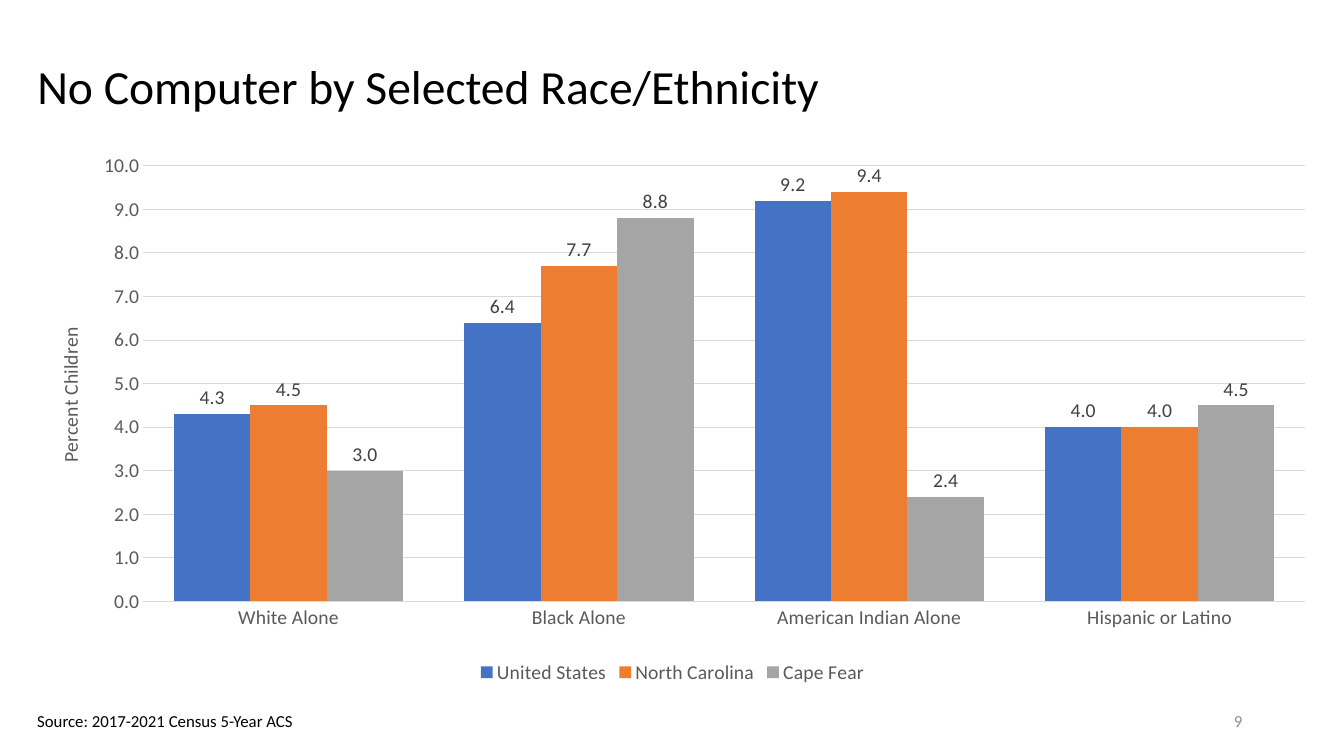
from dataclasses import dataclass
from typing import Optional

import lxml.etree
import pptx
import pptx.chart.data
import pptx.dml.color
import pptx.enum.chart
import pptx.enum.text
import pptx.oxml
import pptx.oxml.ns
import pptx.util

Inches = pptx.util.Inches
Pt = pptx.util.Pt
qn = pptx.oxml.ns.qn
PP_ALIGN = pptx.enum.text.PP_ALIGN
MSO_ANCHOR = pptx.enum.text.MSO_ANCHOR


@dataclass(frozen=True)
class Theme:
    font: str = "Calibri"
    ink: str = "000000"
    axis: str = "595959"
    label: str = "404040"
    muted: str = "8C8C8C"
    grid: str = "D9D9D9"
    title_size: float = 34
    chart_size: float = 14
    small_size: float = 12
    number_format: str = "#,##0.0"


@dataclass(frozen=True)
class Region:
    name: str
    values: tuple
    color: str


@dataclass(frozen=True)
class Caption:
    text: str
    left: float
    top: float
    width: float
    height: float
    color: str
    align: PP_ALIGN
    anchor: MSO_ANCHOR
    wrap: bool


THEME = Theme()
GROUPS = ("White Alone", "Black Alone", "American Indian Alone", "Hispanic or Latino")
REGIONS = (
    Region("United States", (4.3, 6.4, 9.2, 4.0), "4472C4"),
    Region("North Carolina", (4.5, 7.7, 9.4, 4.0), "ED7D31"),
    Region("Cape Fear", (3.0, 8.8, 2.4, 4.5), "A5A5A5"),
)
CAPTIONS = (
    Caption("9", 9.42, 6.95, 3, 0.4, THEME.muted, PP_ALIGN.RIGHT, MSO_ANCHOR.MIDDLE, True),
    Caption("Source: 2017-2021 Census 5-Year ACS", 0.27, 7, 2.78, 0.3, THEME.ink,
            PP_ALIGN.LEFT, MSO_ANCHOR.TOP, False),
)


def rgb(color: str) -> pptx.dml.color.RGBColor:
    return pptx.dml.color.RGBColor.from_string(color)


def style_font(font, size: float, color: str) -> None:
    font.name = THEME.font
    font.size = Pt(size)
    font.bold = False
    font.color.rgb = rgb(color)


def place(s, left: float, top: float, width: float, height: float) -> None:
    s.left, s.top = Inches(left), Inches(top)
    s.width, s.height = Inches(width), Inches(height)


def add_caption(slide, caption: Caption) -> None:
    s = slide.shapes.add_textbox(0, 0, 0, 0)
    place(s, caption.left, caption.top, caption.width, caption.height)
    tf = s.text_frame
    tf.word_wrap = caption.wrap
    tf.vertical_anchor = caption.anchor
    tf.text = caption.text
    p = tf.paragraphs[0]
    p.alignment = caption.align
    style_font(p.runs[0].font, THEME.small_size, caption.color)


def set_layout(parent, x: float, y: float, w: Optional[float] = None,
               h: Optional[float] = None, inner: bool = False) -> None:
    for old in parent.findall(qn("c:layout")):
        parent.remove(old)
    layout = pptx.oxml.parse_xml(f'<c:layout {pptx.oxml.ns.nsdecls("c")}/>')
    manual = lxml.etree.SubElement(layout, qn("c:manualLayout"))
    settings = [("layoutTarget", "inner")] if inner else []
    settings += [("xMode", "edge"), ("yMode", "edge")]
    settings += [(k, str(v)) for k, v in (("x", x), ("y", y), ("w", w), ("h", h)) if v is not None]
    for key, value in settings:
        lxml.etree.SubElement(manual, qn(f"c:{key}")).set("val", value)
    text = parent.find(qn("c:tx"))
    if text is None:
        parent.insert(0, layout)
    else:
        text.addnext(layout)


def format_axes(chart) -> None:
    for axis in (chart.category_axis, chart.value_axis):
        axis.major_tick_mark = axis.minor_tick_mark = pptx.enum.chart.XL_TICK_MARK.NONE
        style_font(axis.tick_labels.font, THEME.chart_size, THEME.axis)
    values = chart.value_axis
    values.minimum_scale, values.maximum_scale, values.major_unit = 0, 10, 1
    values.tick_labels.number_format = THEME.number_format
    values.tick_labels.number_format_is_linked = False
    values.format.line.fill.background()
    for line in (chart.category_axis.format.line, values.major_gridlines.format.line):
        line.color.rgb = rgb(THEME.grid)
        line.width = Pt(0.75)
    title = values.axis_title
    title.text_frame.text = "Percent Children"
    style_font(title.text_frame.paragraphs[0].runs[0].font, THEME.chart_size, THEME.axis)
    body = title.text_frame._txBody.find(qn("a:bodyPr"))
    body.set("rot", "-5400000")
    body.set("vert", "horz")
    set_layout(title._element, 0.02, 0.33)


def add_region_chart(slide) -> None:
    data = pptx.chart.data.CategoryChartData(number_format=THEME.number_format)
    data.categories = GROUPS
    for region in REGIONS:
        data.add_series(region.name, region.values)
    chart = slide.shapes.add_chart(
        pptx.enum.chart.XL_CHART_TYPE.COLUMN_CLUSTERED,
        Inches(0.27), Inches(1.43), Inches(12.8), Inches(5.4), data).chart
    style_font(chart.font, THEME.chart_size, THEME.ink)
    chart.has_title = False
    chart.has_legend = True
    chart.legend.position = pptx.enum.chart.XL_LEGEND_POSITION.BOTTOM
    chart.legend.include_in_layout = False
    style_font(chart.legend.font, THEME.chart_size, THEME.axis)
    plot = chart.plots[0]
    plot.gap_width, plot.overlap = 80, 0
    plot.vary_by_categories = False
    for series, region in zip(plot.series, REGIONS):
        series.format.fill.solid()
        series.format.fill.fore_color.rgb = rgb(region.color)
        series.invert_if_negative = False
        labels = series.data_labels
        labels.show_value = True
        labels.number_format = THEME.number_format
        labels.number_format_is_linked = False
        labels.position = pptx.enum.chart.XL_LABEL_POSITION.OUTSIDE_END
        style_font(labels.font, THEME.chart_size, THEME.label)
    format_axes(chart)
    set_layout(chart._chartSpace.chart.plotArea, 0.09, 0.04, 0.9, 0.8, inner=True)


def main() -> None:
    prs = pptx.Presentation()
    prs.slide_width, prs.slide_height = Inches(13.33), Inches(7.5)
    slide = prs.slides.add_slide(prs.slide_layouts[5])
    title = slide.shapes.title
    place(title, 0.27, 0.34, 12.76, 1.09)
    tf = title.text_frame
    tf.text = "No Computer by Selected Race/Ethnicity"
    tf.vertical_anchor = MSO_ANCHOR.MIDDLE
    p = tf.paragraphs[0]
    p.alignment = PP_ALIGN.LEFT
    p.line_spacing = 0.9
    style_font(p.runs[0].font, THEME.title_size, THEME.ink)
    for caption in CAPTIONS:
        add_caption(slide, caption)
    add_region_chart(slide)
    prs.save("out.pptx")


if __name__ == "__main__":
    main()
